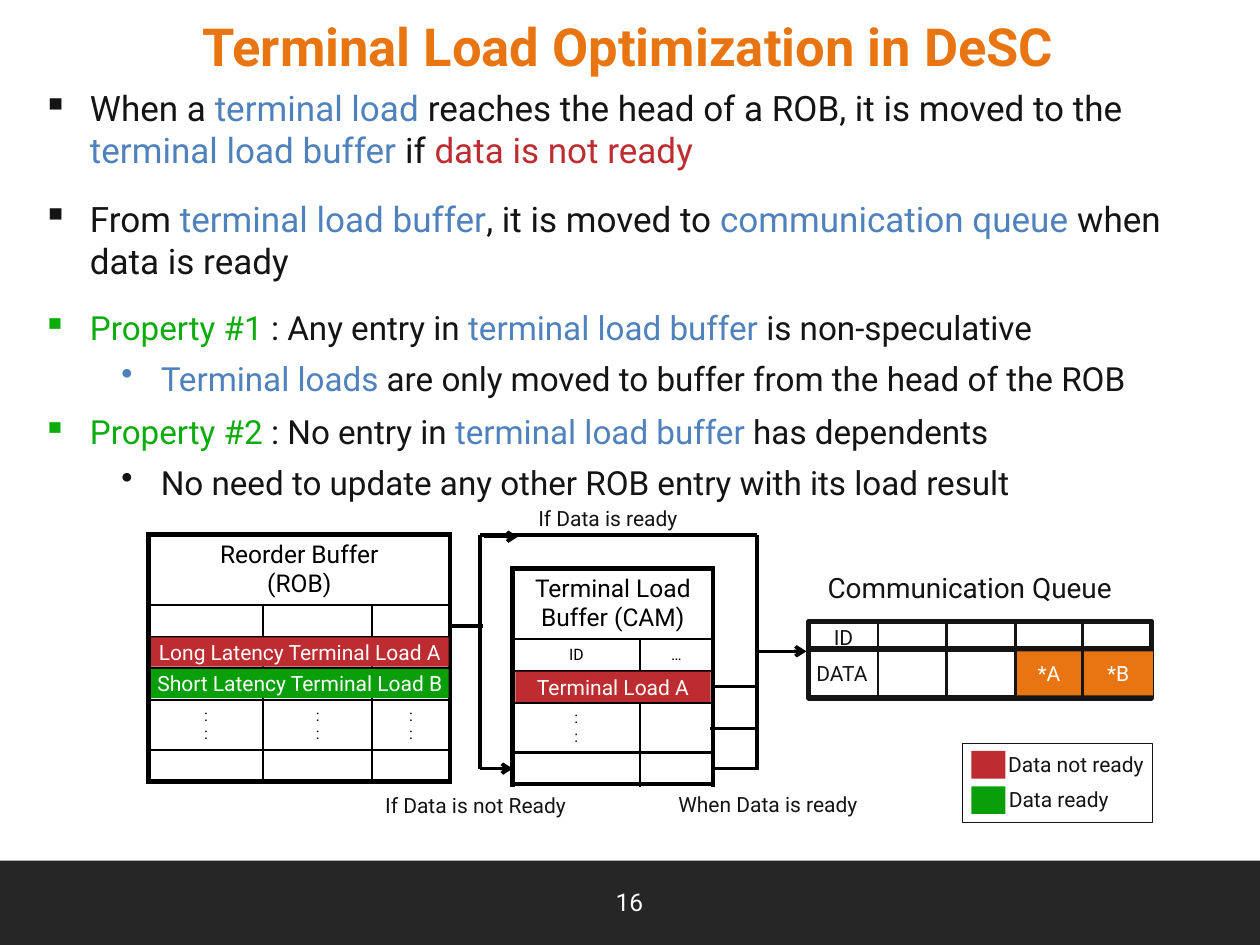
"""Builds the slide on terminal load optimization in DeSC."""
import pptx
import pptx.dml.color
import pptx.enum.shapes
import pptx.enum.text
import pptx.oxml.ns
import pptx.util
from lxml import etree

Pt = pptx.util.Pt
RGB = pptx.dml.color.RGBColor
qn = pptx.oxml.ns.qn
ALIGN = pptx.enum.text.PP_ALIGN
ANCHOR = pptx.enum.text.MSO_ANCHOR
FIT = pptx.enum.text.MSO_AUTO_SIZE
RECT = pptx.enum.shapes.MSO_SHAPE.RECTANGLE
STRAIGHT = pptx.enum.shapes.MSO_CONNECTOR.STRAIGHT

INK = RGB(0x14, 0x14, 0x14)
BLACK = RGB(0, 0, 0)
WHITE = RGB(0xFF, 0xFF, 0xFF)
BAR = RGB(0x26, 0x26, 0x26)
ORANGE = RGB(0xE8, 0x75, 0x11)
BLUE = RGB(0x4F, 0x81, 0xBD)
RED = RGB(0xBC, 0x2C, 0x30)
GREEN = RGB(0x0A, 0x9F, 0x0A)
LIME = RGB(0x0B, 0xAC, 0x0C)

TITLE = "Terminal Load Optimization in DeSC"
TOP = {"size": 20, "before": 15, "mark": "▪", "left": 27, "hang": 27}
PROP = {**TOP, "size": 19}
SUB = {"size": 19, "before": 6, "after": 2, "mark": "•", "left": 67.5, "hang": 22.5}
POINTS = [
    ([("When a ", INK), ("terminal load ", BLUE),
      ("reaches the head of a ROB, it is moved to the ", INK),
      ("terminal load buffer ", BLUE), ("if ", INK), ("data is not ready", RED)],
     {**TOP, "before": 0}),
    ([("From ", INK), ("terminal load buffer", BLUE), (", it is moved to ", INK),
      ("communication queue ", BLUE), ("when data is ready", INK)], TOP),
    ([("Property #1 ", LIME), (": Any entry in ", INK),
      ("terminal load buffer ", BLUE), ("is non-speculative", INK)], PROP),
    ([("Terminal loads ", BLUE),
      ("are only moved to buffer from the head of the ROB", INK)], SUB),
    ([("Property #2 ", LIME), (": No entry in ", INK),
      ("terminal load buffer ", BLUE), ("has dependents", INK)], {**PROP, "before": 6}),
    ([("No need to update any other ROB entry with its load result", INK)], SUB),
]

DOTS = [":", ":"]
TABLES = [
    ((85, 305.3), [65.5, 62.3, 44.3], [40, 18.2, 18.2, 17.8, 28.3, 17.7],
     ["Reorder Buffer", "(ROB)"], {(4, 0): DOTS, (4, 1): DOTS, (4, 2): DOTS}),
    ((293, 324.7), [72.7, 41.8], [40.5, 18.2, 17.8, 28.3, 17.7],
     ["Terminal Load", "Buffer (CAM)"],
     {(1, 0): ["ID"], (1, 1): ["…"], (3, 0): DOTS}),
]

FORK, JOIN = 274.3, 432.7
HIGH, LOW, MID, EXIT = 305.7, 439.2, 357.8, 372.2
WIRES = [
    (FORK, HIGH, JOIN, HIGH, False), (FORK, LOW, 293, LOW, True),
    (276.5, HIGH + 1, 296, HIGH + 1, True), (JOIN, EXIT, 460.8, EXIT, True),
    (407, 392.4, JOIN, 392.4, False), (406, 416.2, JOIN, 416.2, False),
    (407, LOW, JOIN + 1, LOW, False), (FORK, HIGH, FORK, MID, False),
    (JOIN, EXIT, JOIN, LOW + 1, False), (JOIN, HIGH, JOIN, EXIT, False),
    (FORK, MID, FORK, LOW, False), (257.8, MID, 275.8, MID, False),
]

BANDS = [
    ("Long Latency Terminal Load A", 86.4, 364.3, 170, 16.6, RED),
    ("Short Latency Terminal Load B", 86.4, 382.3, 170, 16.6, GREEN),
    ("Terminal Load A", 294.5, 383.8, 111.6, 17.3, RED),
    ("*B", 619.2, 372.2, 39.6, 25.2, ORANGE),
    ("*A", 580.3, 372.2, 38.2, 25.2, ORANGE),
]
QUEUE = (462.2, 355, 195.8, 43.9)
SPLITS = [501.8, 540.7, 580.3, 618.5]
MID_ALIGN, START = ALIGN.CENTER, ALIGN.LEFT
LABELS = [
    ("If Data is not Ready", 211.7, 449.3, 120.2, 12, MID_ALIGN),
    ("When Data is ready", 378, 448.6, 121.7, 12, MID_ALIGN),
    ("Communication Queue", 465.8, 322.6, 186.5, 16, START),
    ("ID", 469.4, 353.5, 26.6, 12, START),
    ("DATA", 459.4, 373.7, 47.5, 12, START),
    ("If Data is ready", 299.5, 285.1, 95.8, 12, MID_ALIGN),
    ("Data not ready", 569, 426.2, 95.8, 12, START),
    ("Data ready", 569.4, 445.7, 74.2, 12, START),
]
KEYS = [(429.1, RED), (449.3, GREEN)]


def write(frame, text, size=12, color=INK, bold=False, align=None, before=0,
          after=0, mark=None, left=0, hang=0):
    """Adds one paragraph, given as a string or as coloured runs."""
    para = frame.add_paragraph() if frame.text else frame.paragraphs[0]
    runs = [(text, color)] if isinstance(text, str) else text
    para.alignment = align
    para.space_before, para.space_after = Pt(before), Pt(after)
    if mark:
        props = para._p.get_or_add_pPr()
        props.set("marL", str(Pt(left)))
        props.set("indent", str(-Pt(hang)))
        tint = etree.SubElement(props, qn("a:buClr"))
        etree.SubElement(tint, qn("a:srgbClr"), val=str(runs[0][1]))
        etree.SubElement(props, qn("a:buChar"), char=mark)
    for words, tone in runs:
        run = para.add_run()
        run.text = words
        font = run.font
        font.name, font.size, font.bold = "Roboto", Pt(size), bold
        font.color.rgb = tone


def box(slide, x, y, w, h, fill=None, edge=None):
    """Adds a rectangle with a fill, an outline width or both."""
    shape = slide.shapes.add_shape(RECT, Pt(x), Pt(y), Pt(w), Pt(h))
    shape.shadow.inherit = False
    if fill is None:
        shape.fill.background()
    else:
        shape.fill.solid()
        shape.fill.fore_color.rgb = fill
    if edge is None:
        shape.line.fill.background()
    else:
        shape.line.color.rgb, shape.line.width = INK, Pt(edge)
    return shape


def note(slide, x, y, w, h, wrap=False):
    """Adds an empty text box and returns its frame."""
    frame = slide.shapes.add_textbox(Pt(x), Pt(y), Pt(w), Pt(h)).text_frame
    frame.word_wrap = wrap
    frame.auto_size = FIT.NONE if wrap else FIT.SHAPE_TO_FIT_TEXT
    return frame


def wire(slide, x1, y1, x2, y2, width=2, color=BLACK, arrow=False):
    """Adds a straight line, with an arrowhead at its end if asked."""
    line = slide.shapes.add_connector(STRAIGHT, Pt(x1), Pt(y1), Pt(x2), Pt(y2))
    line.line.color.rgb, line.line.width = color, Pt(width)
    props = line._element.spPr
    if arrow:
        etree.SubElement(props.find(qn("a:ln")), qn("a:tailEnd"), type="arrow")
    etree.SubElement(props, qn("a:effectLst"))


def frame_cell(cell, **heavy):
    """Draws the four borders of a cell, thick on its heavy sides."""
    props = cell._tc.get_or_add_tcPr()
    for side in "LRTB":
        line = etree.SubElement(props, qn("a:ln" + side),
                                w=str(Pt(3 if heavy[side] else 1.5)))
        fill = etree.SubElement(line, qn("a:solidFill"))
        etree.SubElement(fill, qn("a:srgbClr"), val=str(BLACK))
    cell.fill.background()


def grid(slide, spot, cols, rows, head, cells):
    """Adds a buffer table with a merged heading row."""
    table = slide.shapes.add_table(
        len(rows), len(cols), Pt(spot[0]), Pt(spot[1]), Pt(sum(cols)), Pt(sum(rows))).table
    table.first_row = table.horz_banding = False
    for col, w in zip(table.columns, cols):
        col.width = Pt(w)
    last, end = len(rows) - 1, len(cols) - 1
    for r, h in enumerate(rows):
        table.rows[r].height = Pt(h)
        for c in range(len(cols)):
            cell = table.cell(r, c)
            frame_cell(cell, L=c == 0, R=c == end or r == 0, T=r == 0, B=r == last)
            for text in cells.get((r, c), []):
                write(cell.text_frame, text, size=9, color=BLACK, align=ALIGN.CENTER)
            if (r, c) not in cells:
                etree.SubElement(cell.text_frame.paragraphs[0]._p,
                                 qn("a:endParaRPr"), sz="900")
    table.cell(0, 0).merge(table.cell(0, end))
    for text in head:
        write(table.cell(0, 0).text_frame, text, size=14, color=BLACK, align=ALIGN.CENTER)


def main():
    """Builds and saves the slide."""
    deck = pptx.Presentation()
    deck.slide_width, deck.slide_height = Pt(720), Pt(540)
    slide = deck.slides.add_slide(deck.slide_layouts[5])
    title = slide.shapes.title
    title.left, title.top, title.width, title.height = Pt(13), Pt(-11.5), Pt(692), Pt(75.6)
    title.text_frame.auto_size = FIT.NONE
    title.text_frame.vertical_anchor = ANCHOR.MIDDLE
    write(title.text_frame, TITLE, size=30, color=ORANGE, bold=True, align=ALIGN.CENTER)
    box(slide, 0, 491.8, 720, 48.2, fill=BAR)
    page = note(slide, 275.8, 501.1, 167.8, 28.8, wrap=True)
    page.vertical_anchor = ANCHOR.MIDDLE
    write(page, "16", size=14, color=WHITE, align=ALIGN.CENTER)
    body = note(slide, 17.3, 46.1, 683.3, 205.2, wrap=True)
    for text, look in POINTS:
        write(body, text, **look)
    for table in TABLES:
        grid(slide, *table)
    for *ends, arrow in WIRES:
        wire(slide, *ends, arrow=arrow)
    box(slide, *QUEUE, edge=3)
    x, y, w, h = QUEUE
    wire(slide, x, 370.8, x + w, 370.8, width=3, color=INK)
    for text, *area, fill in BANDS:
        frame = box(slide, *area, fill=fill).text_frame
        frame.margin_left = frame.margin_right = Pt(2)
        frame.vertical_anchor = ANCHOR.MIDDLE
        write(frame, text, color=WHITE, align=ALIGN.CENTER)
    for split in SPLITS:
        wire(slide, split, y + h, split, y, width=1.5, color=INK)
    for top, fill in KEYS:
        box(slide, 555.1, top, 19.4, 15.8, fill=fill)
    for text, left, top, wide, size, align in LABELS:
        write(note(slide, left, top, wide, size * 1.2 + 7.2), text, size=size, align=align)
    box(slide, 550.1, 424.8, 108.7, 45.4, edge=0.75)
    deck.save("out.pptx")


if __name__ == "__main__":
    main()
